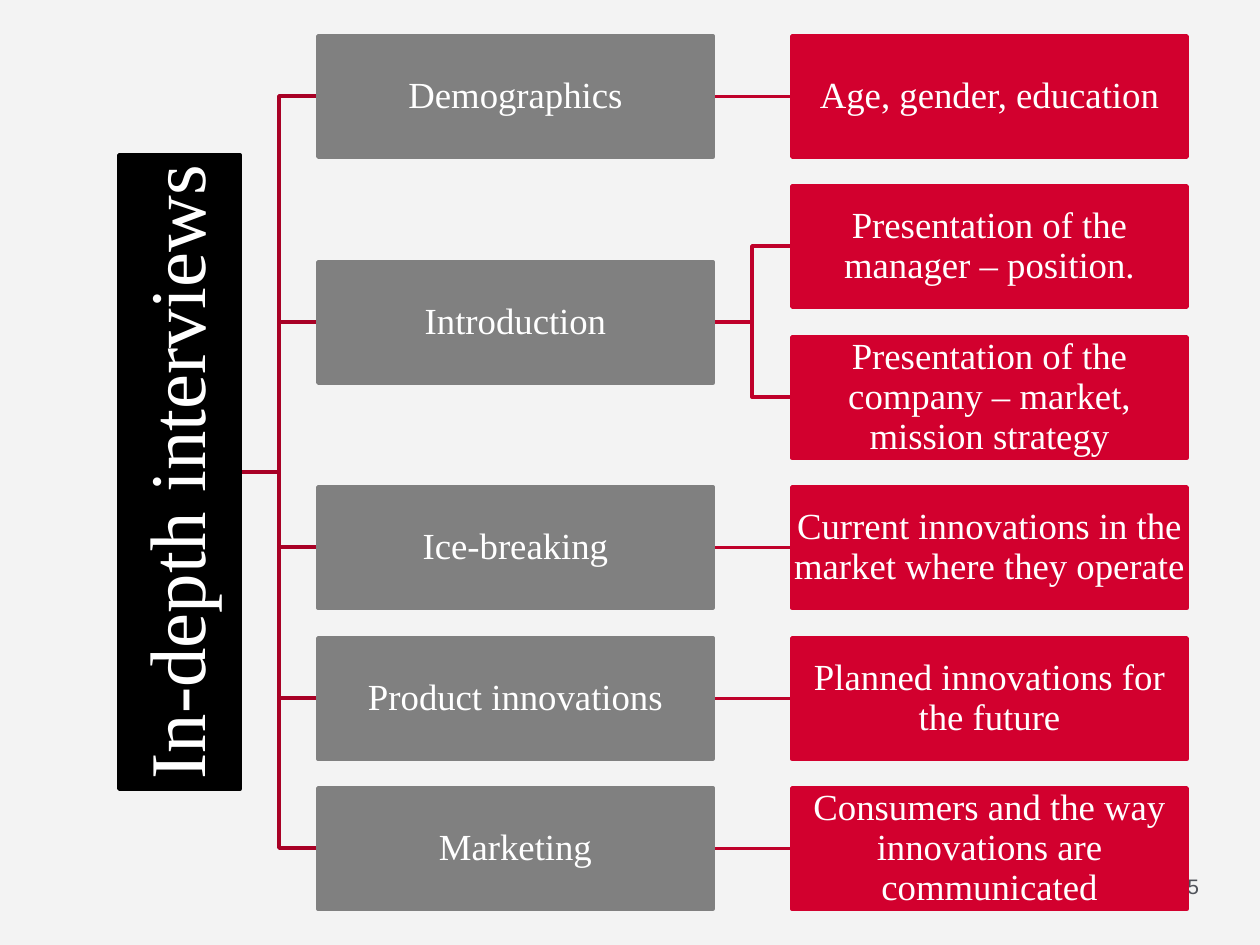
import dataclasses

import pptx
import pptx.dml.color
import pptx.enum.shapes
import pptx.enum.text
import pptx.oxml.ns
import pptx.util
from lxml import etree

EMU_PER_PX = 914400 / 126

ROOT = "In-depth interviews"
TOPICS = [
    ("Demographics", ["Age, gender, education"]),
    ("Introduction", [
        "Presentation of the manager – position.",
        "Presentation of the company – market, mission strategy",
    ]),
    ("Ice-breaking", ["Current innovations in the market where they operate"]),
    ("Product innovations", ["Planned innovations for the future"]),
    ("Marketing", ["Consumers and the way innovations are communicated"]),
]

# Layout in px
BOX_W, BOX_H = 395, 121
FIRST_TOP, ROW_PITCH = 36, 150.4
TOPIC_X, DETAIL_X = 318, 792
ROOT_X, ROOT_MID_Y, ROOT_LENGTH = 119, 472, 634


@dataclasses.dataclass(frozen=True)
class Theme:
    background: str = "F3F3F3"
    root: str = "000000"
    topic: str = "808080"
    detail: str = "D2002E"
    root_link: str = "A80025"
    detail_link: str = "BF002A"
    label: str = "FFFFFF"
    number: str = "50535A"
    label_font: str = "Times New Roman"
    number_font: str = "Arial"
    root_size: int = 45
    label_size: int = 21
    number_size: int = 12
    line_width: int = 2


def px(length):
    return pptx.util.Emu(round(length * EMU_PER_PX))


def rgb(value):
    return pptx.dml.color.RGBColor.from_string(value)


def apply(target, values):
    for name, value in values.items():
        setattr(target, name, value)


class TreeSlide:
    def __init__(self, slide, theme):
        self.slide = slide
        self.theme = theme
        slide.background.fill.solid()
        slide.background.fill.fore_color.rgb = rgb(theme.background)

    def set_text(self, shape, text, size, font, color, align, anchor, inset):
        frame = shape.text_frame
        frame.text = text
        margins = ("margin_left", "margin_top", "margin_right", "margin_bottom")
        apply(frame, dict.fromkeys(margins, px(inset)))
        apply(frame, {
            "word_wrap": True,
            "auto_size": pptx.enum.text.MSO_AUTO_SIZE.NONE,
            "vertical_anchor": anchor,
        })
        line = frame.paragraphs[0]
        line.alignment = align
        apply(line.runs[0].font, {"name": font, "size": pptx.util.Pt(size)})
        line.runs[0].font.color.rgb = rgb(color)

    def page_number(self, text, left, top, width, height):
        number = self.slide.shapes.add_textbox(*map(px, (left, top, width, height)))
        self.set_text(number, text, self.theme.number_size, self.theme.number_font,
                      self.theme.number, pptx.enum.text.PP_ALIGN.RIGHT,
                      pptx.enum.text.MSO_ANCHOR.TOP, 0)

    def style_box(self, box, text, color, size, inset):
        box.fill.solid()
        box.fill.fore_color.rgb = rgb(color)
        self.style_line(box.line, color)
        self.set_text(box, text, size, self.theme.label_font, self.theme.label,
                      pptx.enum.text.PP_ALIGN.CENTER,
                      pptx.enum.text.MSO_ANCHOR.MIDDLE, inset)
        box.text_frame.paragraphs[0].line_spacing = 0.9

    def style_line(self, line, color):
        line.color.rgb = rgb(color)
        line.width = pptx.util.Pt(self.theme.line_width)

    def root(self, text, left, mid_y, length, thickness):
        """Turn the title into an upright bar read from bottom to top."""
        title = self.slide.shapes.title
        apply(title, {
            "left": px(left + (thickness - length) / 2),
            "top": px(mid_y - thickness / 2),
            "width": px(length),
            "height": px(thickness),
            "rotation": 270,
        })
        self.style_box(title, text, self.theme.root, self.theme.root_size, 4)

    def box(self, text, left, top, color):
        box = self.slide.shapes.add_shape(
            pptx.enum.shapes.MSO_SHAPE.RECTANGLE,
            *map(px, (left, top, BOX_W, BOX_H)))
        box.shadow.inherit = False
        self.style_box(box, text, color, self.theme.label_size, 1)
        return box

    def send_to_back(self, shape):
        self.slide.shapes.element.insert(2, shape.element)

    def straight_link(self, source, target, color):
        link = self.slide.shapes.add_connector(
            pptx.enum.shapes.MSO_CONNECTOR.STRAIGHT, 0, 0, 0, 0)
        link.begin_connect(source, 3)
        link.end_connect(target, 1)
        self.style_line(link.line, color)
        etree.SubElement(link.element.spPr, pptx.oxml.ns.qn("a:effectLst"))
        self.send_to_back(link)

    def bent_link(self, start, end, color):
        """Draw a link that turns halfway between two (x, y) points."""
        (x1, y1), (x2, y2) = start, end
        mid_x = (x1 + x2) // 2
        builder = self.slide.shapes.build_freeform(x1, y1, scale=EMU_PER_PX)
        builder.add_line_segments([(mid_x, y1), (mid_x, y2), (x2, y2)], close=False)
        link = builder.convert_to_shape()
        link.fill.background()
        link.shadow.inherit = False
        self.style_line(link.line, color)
        self.send_to_back(link)


def main():
    deck = pptx.Presentation()
    deck.slide_width, deck.slide_height = px(1260), px(945)
    theme = Theme()
    tree = TreeSlide(deck.slides.add_slide(deck.slide_layouts[5]), theme)

    tree.page_number("5", 1106, 874, 93, 35)
    tree.root(ROOT, ROOT_X, ROOT_MID_Y, ROOT_LENGTH, BOX_H)

    half = BOX_H // 2
    row = 0
    for topic_text, detail_texts in TOPICS:
        tops = [FIRST_TOP + round(ROW_PITCH * (row + i))
                for i in range(len(detail_texts))]
        row += len(detail_texts)
        topic_top = round(sum(tops) / len(tops))
        topic = tree.box(topic_text, TOPIC_X, topic_top, theme.topic)
        tree.bent_link((ROOT_X + BOX_H, ROOT_MID_Y),
                       (TOPIC_X, topic_top + half), theme.root_link)
        for detail_text, top in zip(detail_texts, tops):
            detail = tree.box(detail_text, DETAIL_X, top, theme.detail)
            if top == topic_top:
                tree.straight_link(topic, detail, theme.detail_link)
            else:
                tree.bent_link((TOPIC_X + BOX_W, topic_top + half),
                               (DETAIL_X, top + half), theme.detail_link)

    deck.save("out.pptx")


if __name__ == "__main__":
    main()
